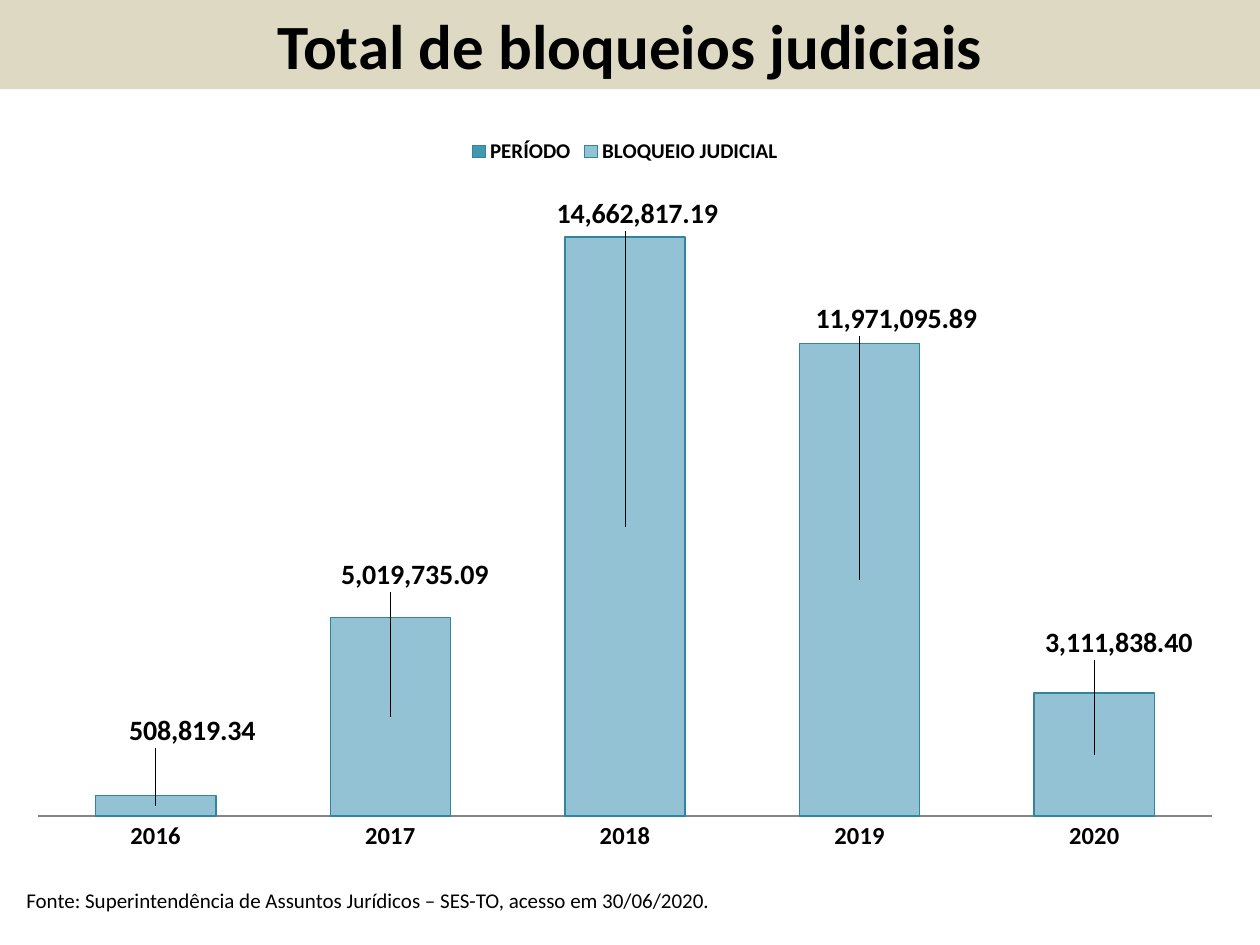
from lxml import etree
from pptx import Presentation
from pptx.chart import data as cd
from pptx.dml import color as dc
from pptx.enum import chart as ec, text as et
from pptx.oxml import ns
from pptx.util import Pt

HUES = {"band": "DDD9C3", "text": "000000", "dark": "4198AF",
        "light": "93C2D4", "edge": "31859C", "axis": "868686"}
YEARS = ["2016", "2017", "2018", "2019", "2020"]
SUMS = [508819.34, 5019735.09, 14662817.19, 11971095.89, 3111838.40]
SHIFTS = [(0.03, -0.1), (0.02, -0.19), (0.01, -0.42), (0.03, -0.35), (0.02, -0.15)]
PLOT = {"layoutTarget": "inner", "xMode": "edge", "yMode": "edge",
        "x": 0.02, "y": 0.08, "w": 0.96, "h": 0.85}


def rgb(key):
    return dc.RGBColor.from_string(HUES[key])


def apply(item, **vals):
    for key, val in vals.items():
        setattr(item, key, val)


def style(font, size, bold=False):
    apply(font, name="Calibri", size=Pt(size), bold=bold)
    font.color.rgb = rgb("text")


def place(box, left, top, width, height):
    apply(box, left=Pt(left), top=Pt(top), width=Pt(width), height=Pt(height))


def write(box, words, size, bold, align, anchor):
    frame = box.text_frame
    apply(frame, word_wrap=True, auto_size=et.MSO_AUTO_SIZE.NONE,
          vertical_anchor=anchor, margin_left=Pt(7.2), margin_right=Pt(7.2),
          margin_top=Pt(3.6), margin_bottom=Pt(3.6))
    para = frame.paragraphs[0]
    para.alignment = align
    run = para.add_run()
    run.text = words
    style(run.font, size, bold)


def layout(vals):
    node = etree.Element(ns.qn("c:layout"))
    inner = etree.SubElement(node, ns.qn("c:manualLayout"))
    for key, val in vals.items():
        etree.SubElement(inner, ns.qn("c:" + key)).set("val", str(val))
    return node


def set_axes(chart):
    cat, val = chart.category_axis, chart.value_axis
    apply(cat, major_tick_mark=ec.XL_TICK_MARK.NONE, has_major_gridlines=False)
    style(cat.tick_labels.font, 14, True)
    cat.format.line.color.rgb = rgb("axis")
    apply(val, visible=False, has_major_gridlines=False,
          minimum_scale=0, maximum_scale=16000000)


def set_labels(bars):
    labels = bars.data_labels
    apply(labels, show_value=True, number_format="#,##0.00",
          number_format_is_linked=False)
    style(labels.font, 16, True)
    for idx, (x, y) in enumerate(SHIFTS):
        label = bars.points[idx].data_label
        label.position = ec.XL_LABEL_POSITION.CENTER
        style(label.font, 16, True)
    nodes = labels._element.findall(ns.qn("c:dLbl"))
    for node, (x, y) in zip(nodes, SHIFTS):
        node.insert(1, layout({"x": x, "y": y}))


def add_bars(slide):
    data = cd.CategoryChartData(number_format="#,##0.00")
    data.categories = YEARS
    data.add_series("PERÍODO", [0, 0, 0])
    data.add_series("BLOQUEIO JUDICIAL", SUMS)
    chart = slide.shapes.add_chart(
        ec.XL_CHART_TYPE.COLUMN_STACKED, Pt(8), Pt(71.3), Pt(698.4), Pt(424.8), data).chart
    style(chart.font, 10)
    apply(chart, has_title=False, has_legend=True)
    apply(chart.legend, position=ec.XL_LEGEND_POSITION.TOP, include_in_layout=False)
    style(chart.legend.font, 12, True)
    set_axes(chart)
    plot = chart.plots[0]
    apply(plot, gap_width=95, overlap=100, vary_by_categories=False)
    for bars, hue in zip(plot.series, ("dark", "light")):
        bars.format.fill.solid()
        bars.format.fill.fore_color.rgb = rgb(hue)
        bars.format.line.color.rgb = rgb("edge")
        bars.format.line.width = Pt(0.75)
    set_labels(plot.series[1])
    area = chart._chartSpace.find(".//" + ns.qn("c:plotArea"))
    for old in area.findall(ns.qn("c:layout")):
        area.remove(old)
    area.insert(0, layout(PLOT))


def main():
    deck = Presentation()
    apply(deck, slide_width=Pt(720), slide_height=Pt(540))
    slide = deck.slides.add_slide(deck.slide_layouts[5])
    title = slide.shapes.title
    place(title, 0, 0, 720, 50.9)
    title.fill.solid()
    title.fill.fore_color.rgb = rgb("band")
    write(title, "Total de bloqueios judiciais", 36, True,
          et.PP_ALIGN.CENTER, et.MSO_ANCHOR.MIDDLE)
    add_bars(slide)
    note = slide.shapes.add_textbox(Pt(8), Pt(503.5), Pt(653), Pt(21.8))
    write(note, "Fonte: Superintendência de Assuntos Jurídicos – SES-TO, acesso em 30/06/2020.",
          12, False, et.PP_ALIGN.LEFT, et.MSO_ANCHOR.TOP)
    deck.save("out.pptx")


if __name__ == "__main__":
    main()
